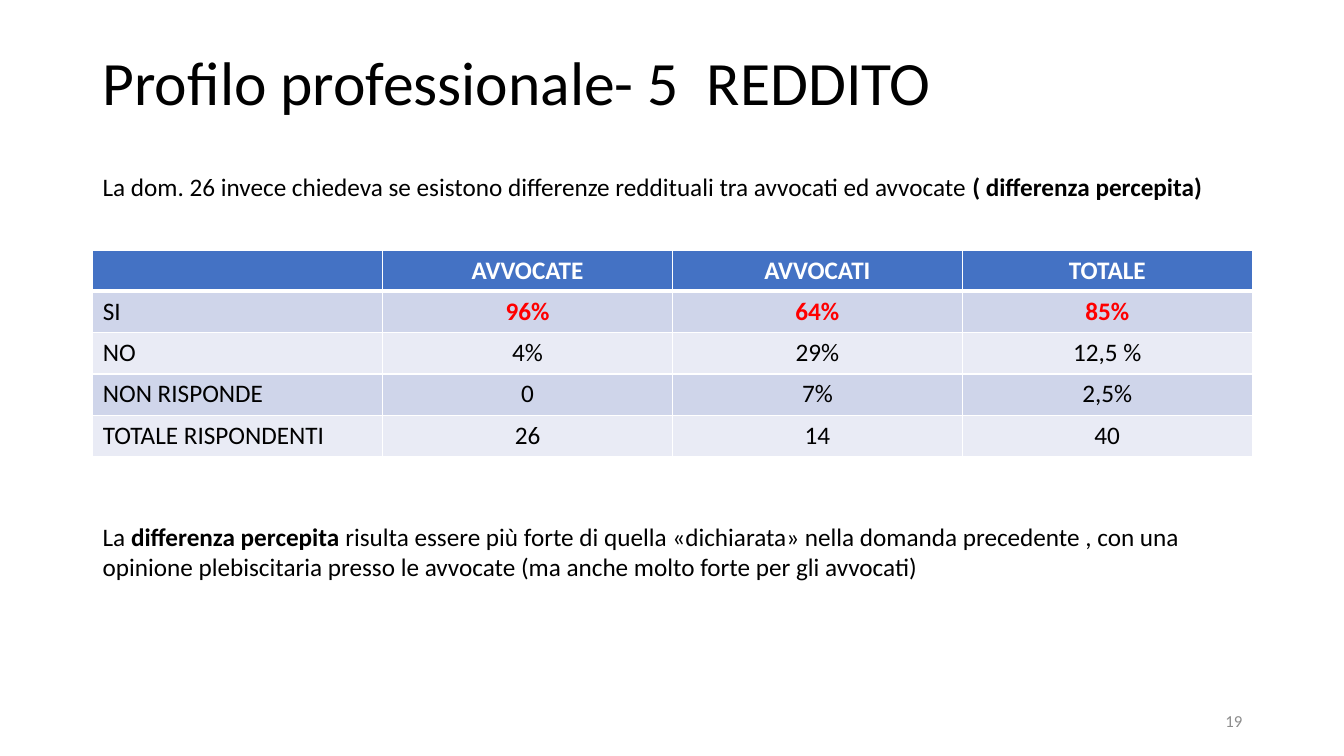
from dataclasses import dataclass

from lxml import etree
from pptx import Presentation
from pptx.dml.color import RGBColor
from pptx.enum.text import MSO_ANCHOR, PP_ALIGN
from pptx.oxml.ns import qn
from pptx.util import Inches, Pt

LEFT, CENTER, RIGHT = PP_ALIGN.LEFT, PP_ALIGN.CENTER, PP_ALIGN.RIGHT
TOP, MIDDLE = MSO_ANCHOR.TOP, MSO_ANCHOR.MIDDLE

FONT = "Calibri"
COLORS = {
    "text": "000000",
    "white": "FFFFFF",
    "number": "8C8C8C",
    "highlight": "FF0000",
    "header": "4472C4",
    "band_dark": "CFD5EA",
    "band_light": "E9EBF5",
}


@dataclass
class Run:
    text: str
    bold: bool = False
    color: str = "text"
    size: float = 18


@dataclass
class TextBlock:
    left: float
    top: float
    width: float
    height: float
    runs: list[Run]
    align: PP_ALIGN = LEFT
    anchor: MSO_ANCHOR = TOP
    line_spacing: float = 1.0


TEXT_BLOCKS = [
    TextBlock(0.92, 0.12, 11.5, 1.45,
              [Run("Profilo professionale- 5  REDDITO", size=44)],
              anchor=MIDDLE, line_spacing=0.9),
    TextBlock(9.42, 6.95, 3, 0.4, [Run("19", color="number", size=12)],
              align=RIGHT, anchor=MIDDLE),
    TextBlock(0.92, 1.65, 11.3, 0.4, [
        Run("La dom. 26 invece chiedeva se esistono differenze reddituali "
            "tra avvocati ed avvocate "),
        Run("( differenza percepita)", bold=True),
    ]),
    TextBlock(0.92, 5.12, 11.3, 0.71, [
        Run("La "),
        Run("differenza percepita ", bold=True),
        Run("risulta essere più forte di quella «dichiarata» nella domanda "
            "precedente , con una opinione plebiscitaria presso le avvocate "
            "(ma anche molto forte per gli avvocati)"),
    ]),
]

TABLE_LEFT, TABLE_TOP, TABLE_WIDTH, ROW_HEIGHT = 0.92, 2.48, 11.5, 0.41
ANSWERS = [
    ["", "AVVOCATE", "AVVOCATI", "TOTALE"],
    ["SI", "96%", "64%", "85%"],
    ["NO", "4%", "29%", "12,5 %"],
    ["NON RISPONDE", "0", "7%", "2,5%"],
    ["TOTALE RISPONDENTI", "26", "14", "40"],
]


def write_runs(p, runs: list[Run], align: PP_ALIGN) -> None:
    p.alignment = align
    for run in runs:
        r = p.add_run()
        r.text = run.text
        font_format = {"name": FONT, "size": Pt(run.size), "bold": run.bold}
        for name, value in font_format.items():
            setattr(r.font, name, value)
        r.font.color.rgb = RGBColor.from_string(COLORS[run.color])


def add_text(slide, block: TextBlock) -> None:
    box = slide.shapes.add_textbox(Inches(block.left), Inches(block.top),
                                   Inches(block.width), Inches(block.height))
    tf = box.text_frame
    frame_format = {"word_wrap": True, "vertical_anchor": block.anchor}
    for name, value in frame_format.items():
        setattr(tf, name, value)
    p = tf.paragraphs[0]
    p.line_spacing = block.line_spacing
    write_runs(p, block.runs, block.align)


def set_borders(cell, widths: dict[str, float]) -> None:
    tc_pr = cell._tc.get_or_add_tcPr()
    for side, width in widths.items():
        line = etree.SubElement(tc_pr, qn(f"a:ln{side}"), w=str(Pt(width)))
        fill = etree.SubElement(line, qn("a:solidFill"))
        etree.SubElement(fill, qn("a:srgbClr"), val=COLORS["white"])


def cell_style(row: int, col: int) -> tuple[str, str, bool]:
    """Return the fill, the text colour and whether the text is bold."""
    if row == 0:
        return "header", "white", True
    band = "band_dark" if row % 2 else "band_light"
    if row == 1 and col > 0:
        return band, "highlight", True
    return band, "text", False


def add_answers_table(slide) -> None:
    n_rows, n_cols = len(ANSWERS), len(ANSWERS[0])
    table = slide.shapes.add_table(
        n_rows, n_cols, Inches(TABLE_LEFT), Inches(TABLE_TOP),
        Inches(TABLE_WIDTH), Inches(ROW_HEIGHT * n_rows)).table
    for row, values in enumerate(ANSWERS):
        table.rows[row].height = Inches(ROW_HEIGHT)
        for col, value in enumerate(values):
            cell = table.cell(row, col)
            fill, color, bold = cell_style(row, col)
            # The rule under the header is thicker than the others
            set_borders(cell, {"L": 1, "R": 1, "T": 3 if row == 1 else 1,
                               "B": 3 if row == 0 else 1})
            cell.fill.solid()
            cell.fill.fore_color.rgb = RGBColor.from_string(COLORS[fill])
            if value:
                write_runs(cell.text_frame.paragraphs[0],
                           [Run(value, bold, color)], CENTER if col else LEFT)


def main() -> None:
    prs = Presentation()
    prs.slide_width, prs.slide_height = Inches(13.33), Inches(7.5)
    s = prs.slides.add_slide(prs.slide_layouts[6])

    # Title, page number and comments
    for block in TEXT_BLOCKS:
        add_text(s, block)

    # Answers by group
    add_answers_table(s)

    prs.save("out.pptx")


if __name__ == "__main__":
    main()
